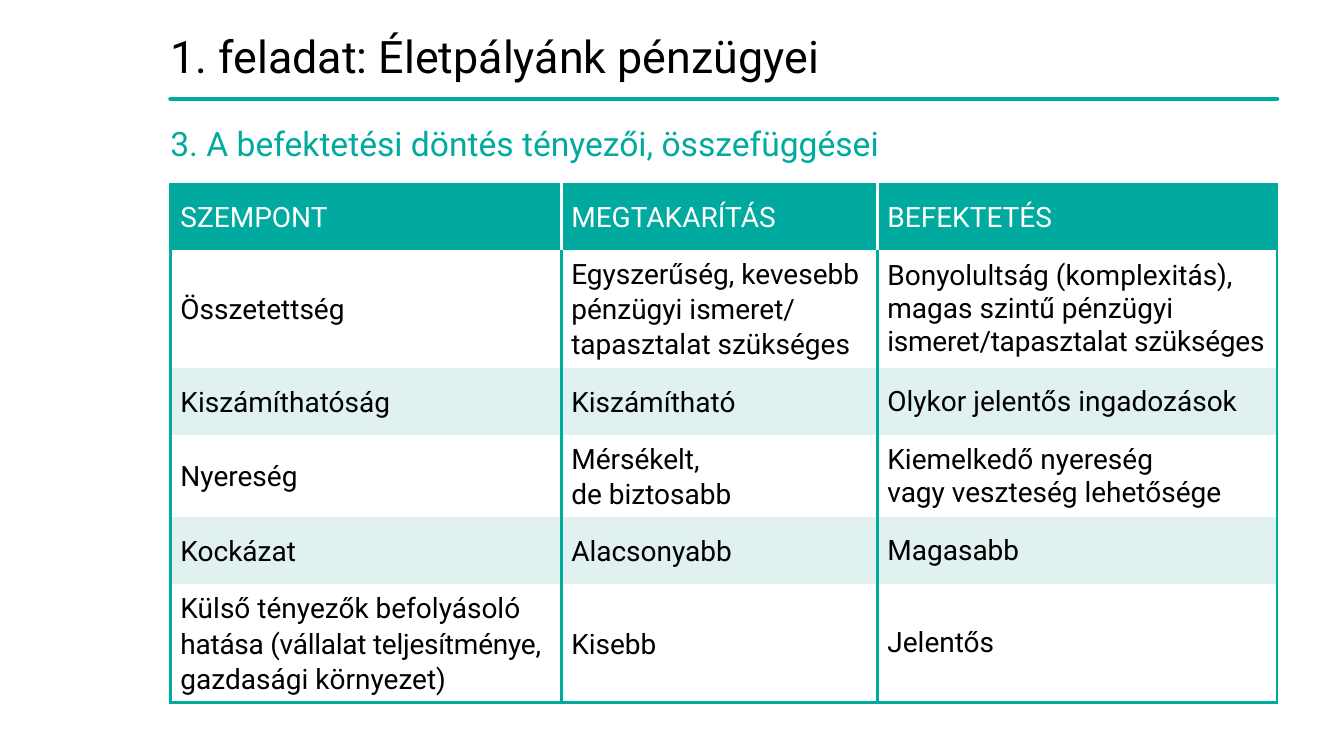
from dataclasses import dataclass

from lxml.etree import SubElement
from pptx import Presentation
from pptx.dml.color import RGBColor
from pptx.enum.shapes import MSO_CONNECTOR
from pptx.enum.text import MSO_ANCHOR
from pptx.oxml.ns import qn
from pptx.util import Pt


@dataclass(frozen=True)
class Theme:
    font: str = "Roboto"
    teal: str = "00AA9F"
    mint: str = "E0F1EF"
    white: str = "FFFFFF"
    black: str = "000000"
    title: int = 32
    sub: int = 24
    body: int = 20
    rule: int = 3
    edge: float = 2.25


THEME = Theme()
LEFT, WIDTH = 121.7, 790.6
COLS = (279.2, 225.8, 285.6)
HEIGHTS = (48, 83, 48, 58, 48, 82)
ROWS = (
    ("SZEMPONT", "MEGTAKARÍTÁS", "BEFEKTETÉS"),
    ("Összetettség",
     "Egyszerűség, kevesebb\npénzügyi ismeret/\ntapasztalat szükséges",
     "Bonyolultság (komplexitás),\nmagas szintű pénzügyi\nismeret/tapasztalat szükséges"),
    ("Kiszámíthatóság", "Kiszámítható", "Olykor jelentős ingadozások"),
    ("Nyereség", "Mérsékelt,\nde biztosabb",
     "Kiemelkedő nyereség\nvagy veszteség lehetősége"),
    ("Kockázat", "Alacsonyabb", "Magasabb"),
    ("Külső tényezők befolyásoló\nhatása (vállalat teljesítménye,\ngazdasági környezet)",
     "Kisebb", "Jelentős"),
)
TIGHT = {(1, 2): 2, (5, 0): 1}


def write(frame, text, size, color, spacing):
    para = frame.paragraphs[0]
    para.text = text
    para.line_spacing = spacing
    para.font.name = THEME.font
    para.font.size = Pt(size)
    para.font.color.rgb = RGBColor.from_string(color)
    return para


def add_label(slide, text, top, height, size, color, anchor):
    box = slide.shapes.add_textbox(Pt(LEFT), Pt(top), Pt(WIDTH), Pt(height))
    frame = box.text_frame
    frame.word_wrap = True
    frame.vertical_anchor = anchor
    frame.margin_left = frame.margin_right = 0
    frame.margin_top = frame.margin_bottom = 0
    write(frame, text, size, color, 0.9)


def add_rule(slide, top):
    rule = slide.shapes.add_connector(
        MSO_CONNECTOR.STRAIGHT, Pt(LEFT), Pt(top), Pt(LEFT + WIDTH), Pt(top))
    rule.line.color.rgb = RGBColor.from_string(THEME.teal)
    rule.line.width = Pt(THEME.rule)
    rule.line._get_or_add_ln().set("cap", "rnd")
    SubElement(rule._element.spPr, qn("a:effectLst"))


def add_edge(cell, side, color):
    edge = SubElement(cell._tc.get_or_add_tcPr(), qn(f"a:ln{side}"))
    if color:
        edge.set("w", str(Pt(THEME.edge)))
        fill = SubElement(edge, qn("a:solidFill"))
        SubElement(fill, qn("a:srgbClr"), val=color)
    else:
        SubElement(edge, qn("a:noFill"))


def style_cell(cell, row, col):
    head = row == 0
    last = len(COLS) - 1
    inner = THEME.white if head else THEME.teal
    add_edge(cell, "L", inner if col > 0 else THEME.teal)
    add_edge(cell, "R", inner if col < last else THEME.teal)
    add_edge(cell, "T", None)
    add_edge(cell, "B", THEME.teal if row == len(ROWS) - 1 else None)
    band = THEME.white if row % 2 else THEME.mint
    cell.fill.solid()
    cell.fill.fore_color.rgb = RGBColor.from_string(THEME.teal if head else band)
    cell.vertical_anchor = MSO_ANCHOR.MIDDLE
    para = write(cell.text_frame, ROWS[row][col], THEME.body,
                 THEME.white if head else THEME.black,
                 1.0 if col == last and not head else 1.07)
    if (row, col) in TIGHT:
        run = para.runs[TIGHT[row, col]]
        run._r.get_or_add_rPr().set("spc", "-20")


def add_grid(slide, top):
    table = slide.shapes.add_table(
        len(ROWS), len(COLS), Pt(LEFT), Pt(top), Pt(WIDTH), Pt(sum(HEIGHTS))).table
    table.first_row = table.horz_banding = False
    for column, width in zip(table.columns, COLS):
        column.width = Pt(width)
    for row, height in enumerate(HEIGHTS):
        table.rows[row].height = Pt(height)
        for col in range(len(COLS)):
            style_cell(table.cell(row, col), row, col)


def main():
    deck = Presentation()
    deck.slide_width, deck.slide_height = Pt(960), Pt(540)
    slide = deck.slides.add_slide(deck.slide_layouts[6])
    add_rule(slide, 70.6)
    add_label(slide, "1. feladat: Életpályánk pénzügyei", 23.8, 36.7,
              THEME.title, THEME.black, MSO_ANCHOR.MIDDLE)
    add_grid(slide, 130.5)
    add_label(slide, "3. A befektetési döntés tényezői, összefüggései", 90.7, 26,
              THEME.sub, THEME.teal, MSO_ANCHOR.TOP)
    deck.save("out.pptx")


if __name__ == "__main__":
    main()
